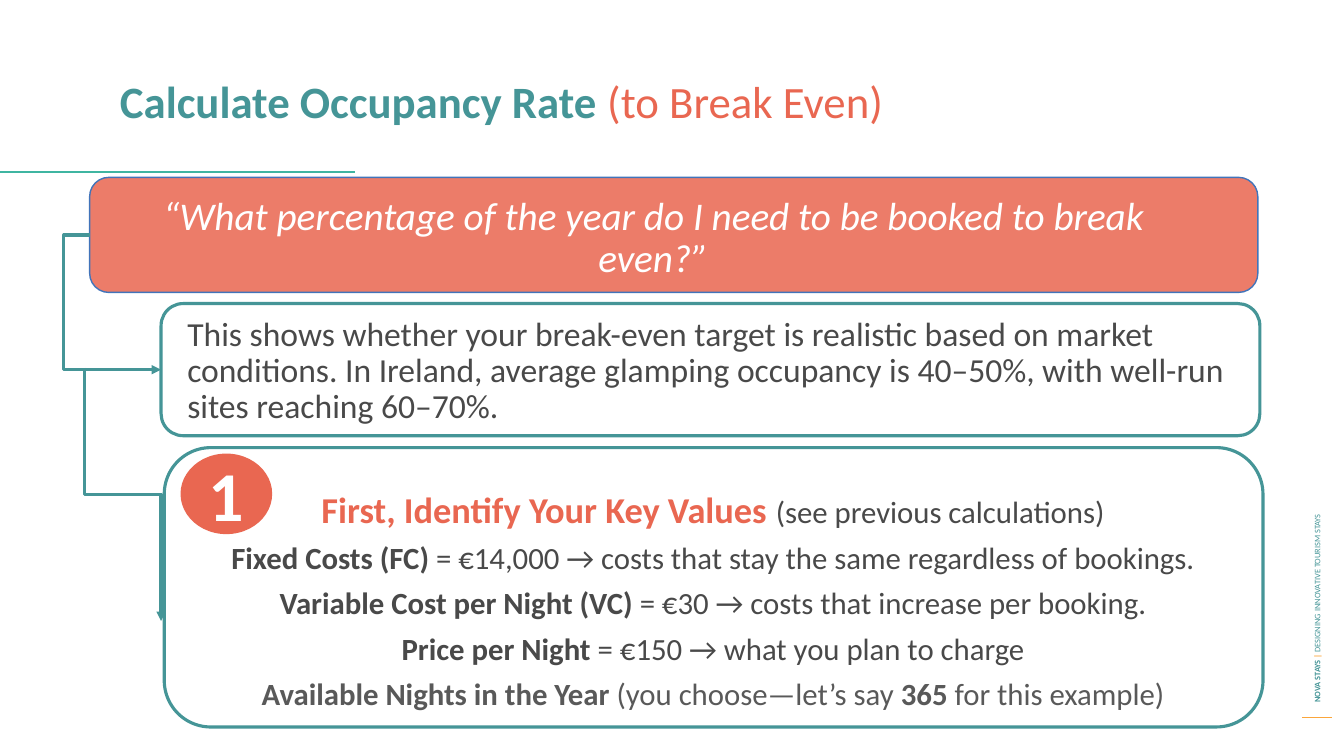
from lxml import etree
from pptx import Presentation
from pptx.dml.color import RGBColor
from pptx.enum.shapes import MSO_CONNECTOR, MSO_SHAPE
from pptx.enum.text import MSO_ANCHOR, MSO_AUTO_SIZE, PP_ALIGN
from pptx.oxml.ns import qn
from pptx.util import Cm, Pt

CARD, OVAL = MSO_SHAPE.FLOWCHART_ALTERNATE_PROCESS, MSO_SHAPE.OVAL
STRAIGHT, ELBOW = MSO_CONNECTOR.STRAIGHT, MSO_CONNECTOR.ELBOW
LEFT, CENTER = PP_ALIGN.LEFT, PP_ALIGN.CENTER
TOP, MIDDLE = MSO_ANCHOR.TOP, MSO_ANCHOR.MIDDLE
NO_AUTOFIT = MSO_AUTO_SIZE.NONE

FONT = "Calibri"
COLORS = {
    "teal": "459597", "green": "3FB5A1", "coral": "E96751",
    "salmon": "EC7C69", "blue": "4174BA", "amber": "FBA63B",
    "text": "494949", "muted": "595959", "white": "FFFFFF",
}

# Regions in cm: left, top, width, height
TITLE_BOX = (2.77, 1.88, 29.49, 2.24)
QUOTE_BOX = (2.26, 4.47, 29.44, 2.9)
CONTEXT_BOX = (4.06, 7.65, 27.69, 3.33)
VALUES_BOX = (4.14, 11.28, 27.69, 7.04)
SIDEBAR_BOX = (32.82, 3.3, 0.74, 14.78)

KEY_VALUES = [
    [("First, Identify Your Key Values ", 26, "coral", True),
     ("(see previous calculations)", 22, "text", False)],
    [("Fixed Costs (FC) ", 22, "text", True),
     ("= €14,000 → costs that stay the same regardless of bookings.", 22, "text", False)],
    [("Variable Cost per Night (VC) ", 22, "text", True),
     ("= €30 → costs that increase per booking.", 22, "text", False)],
    [("Price per Night ", 22, "text", True),
     ("= €150 → what you plan to charge", 22, "text", False)],
    [("Available Nights in the Year", 22, "muted", True),
     (" (you choose—let’s say ", 22, "muted", False),
     ("365", 22, "muted", True),
     (" for this example)", 22, "muted", False)],
]


def rgb(name):
    return RGBColor.from_string(COLORS[name])


def place(holder, left, top, width, height):
    holder.left, holder.top = Cm(left), Cm(top)
    holder.width, holder.height = Cm(width), Cm(height)


def write(frame, lines, align=LEFT, anchor=TOP, spacing=1.0, after=0, italic=False):
    """Fill a frame with lines made of (text, size, color, bold) runs."""
    frame.word_wrap = True
    frame.auto_size = NO_AUTOFIT
    frame.vertical_anchor = anchor
    for number, runs in enumerate(lines):
        paragraph = frame.add_paragraph() if number else frame.paragraphs[0]
        paragraph.alignment = align
        paragraph.line_spacing = spacing
        paragraph.space_before, paragraph.space_after = Pt(0), Pt(after)
        for text, size, color, bold in runs:
            run = paragraph.add_run()
            run.text = text
            run.font.name, run.font.size = FONT, Pt(size)
            run.font.bold, run.font.italic = bold, italic
            run.font.color.rgb = rgb(color)


def add_text(slide, box, lines, **style):
    text_box = slide.shapes.add_textbox(*map(Cm, box))
    write(text_box.text_frame, lines, **style)
    return text_box


def add_panel(slide, preset, box, fill=None, line=None, weight=2.25):
    panel = slide.shapes.add_shape(preset, *map(Cm, box))
    panel.shadow.inherit = False
    if fill:
        panel.fill.solid()
        panel.fill.fore_color.rgb = rgb(fill)
    else:
        panel.fill.background()
    if line:
        panel.line.color.rgb = rgb(line)
        panel.line.width = Pt(weight)
    else:
        panel.line.fill.background()
    return panel


def add_line(slide, kind, ends, color, weight):
    line = slide.shapes.add_connector(kind, *map(Cm, ends))
    line.line.color.rgb = rgb(color)
    line.line.width = Pt(weight)
    etree.SubElement(line._element.spPr, qn("a:effectLst"))
    return line


def add_elbow_arrow(slide, ends, bend, rotation=0):
    arrow = add_line(slide, ELBOW, ends, "teal", 2.25)
    properties = arrow._element.spPr
    etree.SubElement(properties.find(qn("a:ln")), qn("a:tailEnd"), type="triangle")
    properties.find(qn("a:xfrm")).set("rot", str(rotation * 60000))
    guides = properties.find(qn("a:prstGeom")).get_or_add_avLst()
    etree.SubElement(guides, qn("a:gd"), name="adj1", fmla=f"val {round(bend * 100000)}")


def add_sidebar(slide, box):
    left, top, width, height = box
    bottom = top + height
    add_line(slide, STRAIGHT, (left, bottom, left + width, bottom), "amber", 0.75)
    # Vertical label, turned about its centre
    length, depth = 14.66, 0.51
    center_x, center_y = left + width / 2, top + length / 2
    label = add_text(
        slide, (center_x - length / 2, center_y - depth / 2, length, depth),
        [[("NOVA STAYS ", 6, "teal", True), ("| ", 6, "amber", True),
          ("DESIGNING INNOVATIVE TOURISM STAYS", 6, "teal", False)]], anchor=MIDDLE)
    label.rotation = 270


def add_title(slide, box):
    title = slide.shapes.title
    place(title, *box)
    write(title.text_frame, [[("Calculate Occupancy Rate ", 32, "teal", True),
                              ("(to Break Even)", 32, "coral", False)]], spacing=0.9)
    rule_y = box[1] + box[3] + 0.22
    add_line(slide, STRAIGHT, (0, rule_y, 8.94, rule_y), "green", 1.5)


def add_quote(slide, box):
    left, top, width, height = box
    panel = add_panel(slide, CARD, box, "salmon", "blue", 1)
    question = slide.placeholders[1]
    place(question, left + 1.52, top + 0.36, 25.37, 2.24)
    # Bring the question in front of its panel
    panel._element.addnext(question._element)
    properties = question.text_frame.paragraphs[0]._p.get_or_add_pPr()
    properties.set("marL", "0")
    properties.set("indent", "0")
    etree.SubElement(properties, qn("a:buNone"))
    write(question.text_frame,
          [[("“What percentage of the year do I need to be booked to break even?”",
             28, "white", False)]],
          align=CENTER, spacing=0.9, after=6, italic=True)


def add_context(slide, box):
    left, top, width, height = box
    add_panel(slide, CARD, box, line="teal")
    add_text(slide, (left + 0.41, top + 0.22, width - 0.36, height - 0.44),
             [[("This shows whether your break-even target is realistic based on market "
                "conditions. In Ireland, average glamping occupancy is 40–50%, with "
                "well-run sites reaching 60–70%.", 24, "text", False)]],
             spacing=0.9, after=12)


def add_key_values(slide, box):
    left, top, width, height = box
    add_panel(slide, CARD, box, line="teal")
    add_text(slide, (left + 0.33, top + 0.86, 27, height - 1.1),
             KEY_VALUES, align=CENTER, after=6)
    # Step number
    badge = add_panel(slide, OVAL, (left + 0.41, top + 0.15, 2.31, 2.03), "coral")
    frame = badge.text_frame
    frame.margin_left = frame.margin_right = frame.margin_top = frame.margin_bottom = 0
    write(frame, [[("1", 50, "white", True)]], align=CENTER, anchor=MIDDLE)
    frame.word_wrap = False


def add_flow(slide, quote, context):
    quote_y = quote[1] + quote[3] / 2
    context_y = context[1] + context[3] / 2
    add_elbow_arrow(slide, (quote[0], quote_y, context[0], context_y), -0.36)
    # Second arrow leaves downwards: a mirrored elbow turned by 270 degrees
    start_x, start_y, drop, shift = 2.13, 9.27, 6.38, 1.93
    center_x, center_y = start_x + shift / 2, start_y + drop / 2
    add_elbow_arrow(slide, (center_x + drop / 2, center_y - shift / 2,
                            center_x - drop / 2, center_y + shift / 2), 0.5, 270)


def main():
    deck = Presentation()
    deck.slide_width, deck.slide_height = Cm(33.87), Cm(19.05)
    slide = deck.slides.add_slide(deck.slide_layouts[1])
    add_sidebar(slide, SIDEBAR_BOX)
    add_title(slide, TITLE_BOX)
    add_quote(slide, QUOTE_BOX)
    add_context(slide, CONTEXT_BOX)
    add_flow(slide, QUOTE_BOX, CONTEXT_BOX)
    add_key_values(slide, VALUES_BOX)
    deck.save("out.pptx")


if __name__ == "__main__":
    main()
